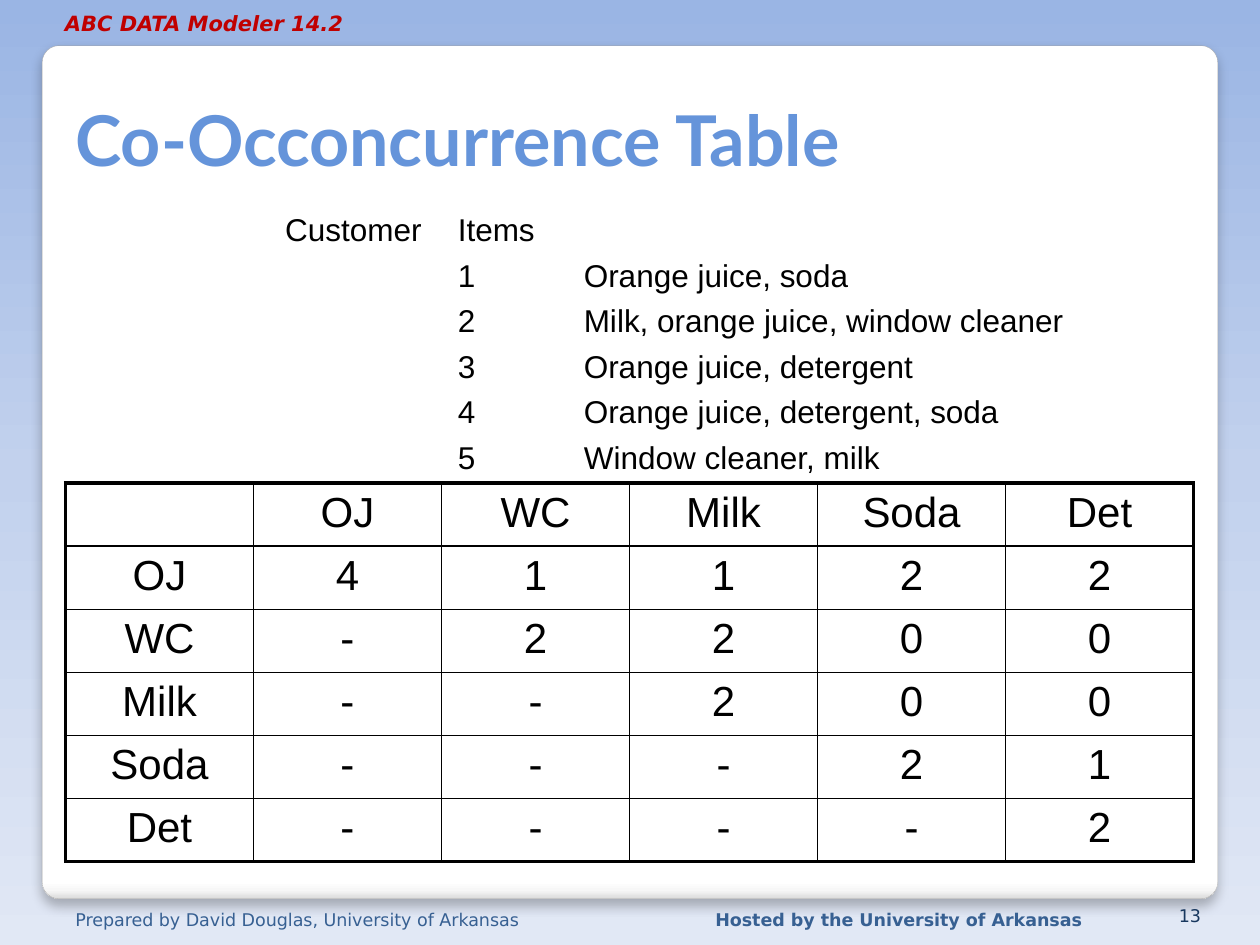
from dataclasses import dataclass

from lxml import etree
from pptx import Presentation
from pptx import util as u
from pptx.dml.color import RGBColor
from pptx.enum import shapes, text
from pptx.oxml import ns


@dataclass(frozen=True)
class Theme:
    """Colours, fonts and type sizes of the slide."""
    ink: str = "000000"
    product: str = "C00000"
    title: str = "6594DA"
    footer: str = "376092"
    number: str = "17375E"
    edge: str = "A4A4A4"
    sky: tuple = ((0, "9AB5E4"), (50, "C2D1ED"), (100, "E1E8F5"))
    paper: tuple = ((0, "FFFFFF"), (98, "FFFFFF"), (99, "F7F7F7"), (100, "DADADA"))
    body_font: str = "Arial"
    title_font: str = "Lato"
    label_font: str = "DejaVu Sans"
    title_size: float = 40
    table_size: float = 24
    list_size: float = 18
    product_size: float = 12
    footer_size: float = 10
    thin: float = 1
    thick: float = 2.25


def add_xml(parent, tag, **attributes):
    child = etree.SubElement(parent, ns.qn(tag))
    for key, value in attributes.items():
        child.set(key, str(value))
    return child


class SlideBuilder:
    """Draws styled elements on the current slide."""

    def __init__(self, page, theme):
        self.page = page
        self.theme = theme

    def gradient(self, fill, owner, stops):
        fill.gradient()
        fill.gradient_angle = 270
        stop_list = next(owner.iter(ns.qn("a:gsLst")))
        for stop in list(stop_list):
            stop_list.remove(stop)
        for position, color in stops:
            stop = add_xml(stop_list, "a:gs", pos=position * 1000)
            add_xml(stop, "a:srgbClr", val=color)

    def background(self):
        self.gradient(self.page.background.fill, self.page._element, self.theme.sky)

    def panel(self, left, top, width, height):
        panel = self.page.shapes.add_shape(
            shapes.MSO_SHAPE.ROUNDED_RECTANGLE,
            u.Cm(left), u.Cm(top), u.Cm(width), u.Cm(height))
        panel.adjustments[0] = 0.02
        self.gradient(panel.fill, panel._element, self.theme.paper)
        panel.line.color.rgb = RGBColor.from_string(self.theme.edge)
        panel.line.width = u.Pt(0.16)
        effects = add_xml(panel._element.spPr, "a:effectLst")
        shadow = add_xml(effects, "a:outerShdw", blurRad=u.Pt(6), dist=u.Pt(4),
                         dir=5400000, algn="t", rotWithShape=0)
        color = add_xml(shadow, "a:srgbClr", val=self.theme.ink)
        add_xml(color, "a:alpha", val=25000)

    def style(self, para, font, size, color, bold=False, italic=False):
        para.font.name = font
        para.font.size = u.Pt(size)
        para.font.color.rgb = RGBColor.from_string(color)
        para.font.bold = bold
        para.font.italic = italic

    def label(self, words, left, top, width, height, font, size, color,
              bold=False, italic=False, anchor=text.MSO_ANCHOR.TOP,
              align=text.PP_ALIGN.LEFT):
        box = self.page.shapes.add_textbox(
            u.Cm(left), u.Cm(top), u.Cm(width), u.Cm(height))
        frame = box.text_frame
        frame.word_wrap = True
        frame.vertical_anchor = anchor
        frame.text = words
        for para in frame.paragraphs:
            para.alignment = align
            self.style(para, font, size, color, bold, italic)
        return frame

    def tabbed_list(self, lines, left, top, width, height, stops):
        frame = self.label("\n".join(lines), left, top, width, height,
                           self.theme.body_font, self.theme.list_size, self.theme.ink)
        frame.margin_top = 0
        for index, para in enumerate(frame.paragraphs):
            para.space_before = u.Pt(4.4 if index else 0)
            tabs = etree.Element(ns.qn("a:tabLst"))
            for stop in stops:
                add_xml(tabs, "a:tab", pos=u.Cm(stop), algn="l")
            para._p.get_or_add_pPr().find(ns.qn("a:defRPr")).addprevious(tabs)

    def borders(self, cell, weights):
        properties = cell._tc.get_or_add_tcPr()
        for index, (side, weight) in enumerate(zip("LRTB", weights)):
            line = etree.Element(ns.qn(f"a:ln{side}"), w=str(u.Pt(weight)))
            add_xml(add_xml(line, "a:solidFill"), "a:srgbClr", val=self.theme.ink)
            properties.insert(index, line)

    def table(self, rows, left, top, column_width, row_height):
        theme = self.theme
        height, width = len(rows), len(rows[0])
        table = self.page.shapes.add_table(
            height, width, u.Cm(left), u.Cm(top),
            u.Cm(column_width * width), u.Cm(row_height * height)).table
        table.first_row = table.horz_banding = False
        for column in table.columns:
            column.width = u.Cm(column_width)
        for r, values in enumerate(rows):
            table.rows[r].height = u.Cm(row_height)
            for c, value in enumerate(values):
                cell = table.cell(r, c)
                cell.text = value
                cell.margin_left = cell.margin_right = u.Cm(0.3)
                cell.fill.background()
                para = cell.text_frame.paragraphs[0]
                para.alignment = text.PP_ALIGN.CENTER
                self.style(para, theme.body_font, theme.table_size, theme.ink)
                outer = (c == 0, c == width - 1, r == 0, r == height - 1)
                self.borders(cell, [theme.thick if edge else theme.thin for edge in outer])


def main():
    deck = Presentation()
    deck.slide_width, deck.slide_height = u.Cm(25.4), u.Cm(19.05)
    theme = Theme()
    slide = SlideBuilder(deck.slides.add_slide(deck.slide_layouts[6]), theme)

    slide.background()
    slide.panel(0.85, 0.92, 23.7, 17.2)
    slide.label("ABC DATA Modeler 14.2", 1.06, 0.08, 10, 0.76, theme.label_font,
                theme.product_size, theme.product, bold=True, italic=True)
    slide.label("Co-Occoncurrence Table", 1.27, 0.84, 22.73, 2.92, theme.title_font,
                theme.title_size, theme.title, bold=True,
                anchor=text.MSO_ANCHOR.BOTTOM)

    items = ["OJ", "WC", "Milk", "Soda", "Det"]
    counts = ["41122", "-2200", "--200", "---21", "----2"]
    rows = [["", *items]] + [[item, *row] for item, row in zip(items, counts)]
    slide.table(rows, 1.32, 9.74, 3.79, 1.24)

    baskets = ["Orange juice, soda", "Milk, orange juice, window cleaner",
               "Orange juice, detergent", "Orange juice, detergent, soda",
               "Window cleaner, milk"]
    lines = [f"\t{number}\t{basket}" for number, basket in enumerate(baskets, 1)]
    slide.tabbed_list(["Customer\tItems", *lines], 5.5, 4.24, 18.85, 5.4, (3.48, 6.02))

    slide.label("Prepared by David Douglas, University of Arkansas", 1.27, 18.21, 11.33,
                0.58, theme.label_font, theme.footer_size, theme.footer)
    slide.label("Hosted by the University of Arkansas", 14.17, 18.21, 8.69, 0.58,
                theme.label_font, theme.footer_size, theme.footer, bold=True)
    slide.label("13", 23.19, 18.21, 1.27, 0.58, theme.label_font, theme.footer_size,
                theme.number, anchor=text.MSO_ANCHOR.BOTTOM, align=text.PP_ALIGN.RIGHT)
    deck.save("out.pptx")


if __name__ == "__main__":
    main()
